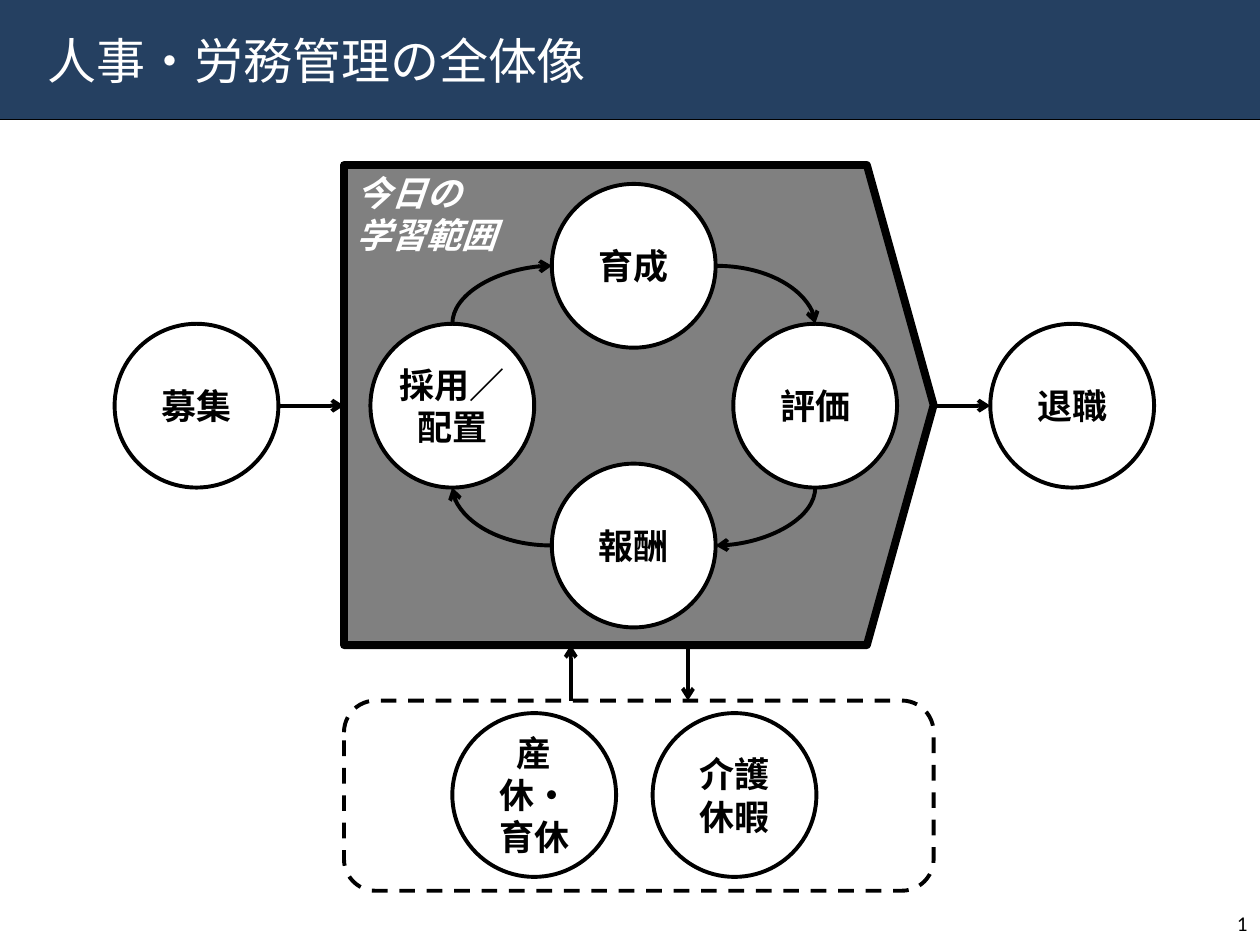
import pptx
import pptx.util
import pptx.dml.color
import pptx.enum.dml
import pptx.enum.shapes
import pptx.enum.text
import pptx.oxml
import pptx.oxml.ns

Inches, Pt = pptx.util.Inches, pptx.util.Pt
SHAPE = pptx.enum.shapes.MSO_SHAPE
CONNECTOR = pptx.enum.shapes.MSO_CONNECTOR
ALIGN = pptx.enum.text.PP_ALIGN
ANCHOR = pptx.enum.text.MSO_ANCHOR
DASH = pptx.enum.dml.MSO_LINE.DASH

WIDTH, HEIGHT = 10, 7.5
NAVY, BLACK, WHITE, GRAY = "254061", "000000", "FFFFFF", "808080"
DIAMETER = 1.3
RADIUS = DIAMETER / 2
MIDDLE_X, MIDDLE_Y = 5.03, 3.22      # centre of the cycle
STEP_X, STEP_Y = 1.44, 1.11          # centre of the cycle to its circles
LEAVE_Y = 6.31
HEADER_HEIGHT = 0.95

SCOPE = (2.73, 1.31, 4.68, 3.81)
LEAVE = (2.73, 5.56, 4.68, 1.51)
SCOPE_RIGHT = SCOPE[0] + SCOPE[2]
SCOPE_BOTTOM = SCOPE[1] + SCOPE[3]

# label: centre of its circle
CIRCLES = {
    "募集": (1.56, MIDDLE_Y),
    "採用／\n配置": (MIDDLE_X - STEP_X, MIDDLE_Y),
    "評価": (MIDDLE_X + STEP_X, MIDDLE_Y),
    "育成": (MIDDLE_X, MIDDLE_Y - STEP_Y),
    "報酬": (MIDDLE_X, MIDDLE_Y + STEP_Y),
    "退職": (8.51, MIDDLE_Y),
    "産休・育休": (4.24, LEAVE_Y),
    "介護\n休暇": (5.83, LEAVE_Y),
}
UNWRAPPED = "採用／\n配置"
CYCLE = ["採用／\n配置", "育成", "評価", "報酬"]
STRAIGHT_ARROWS = [
    ((CIRCLES["募集"][0] + RADIUS, MIDDLE_Y), (SCOPE[0], MIDDLE_Y)),
    ((SCOPE_RIGHT, MIDDLE_Y), (CIRCLES["退職"][0] - RADIUS, MIDDLE_Y)),
    ((4.53, LEAVE[1]), (4.53, SCOPE_BOTTOM)),
    ((5.46, SCOPE_BOTTOM), (5.46, LEAVE[1])),
]


def rgb(color):
    return pptx.dml.color.RGBColor.from_string(color)


def write(shape, text, align=ALIGN.LEFT, anchor=ANCHOR.MIDDLE, wrap=True,
          color=BLACK, **font_format):
    frame = shape.text_frame
    frame.word_wrap = wrap
    frame.vertical_anchor = anchor
    paragraph = frame.paragraphs[0]
    paragraph.text = text
    paragraph.alignment = align
    for name, value in font_format.items():
        setattr(paragraph.font, name, value)
    paragraph.font.color.rgb = rgb(color)


def add_text(slide, box, text, **text_format):
    shape = slide.shapes.add_textbox(*map(Inches, box))
    write(shape, text, name="Calibri", **text_format)


def add_shape(slide, kind, box, fill, line_width=0):
    shape = slide.shapes.add_shape(kind, *map(Inches, box))
    shape.shadow.inherit = False
    shape.fill.solid()
    shape.fill.fore_color.rgb = rgb(fill)
    if line_width:
        shape.line.color.rgb = rgb(BLACK)
        shape.line.width = Pt(line_width)
    else:
        shape.line.fill.background()
    return shape


def add_line(slide, start, end, kind=CONNECTOR.STRAIGHT, width=2.25, arrow=True):
    line = slide.shapes.add_connector(kind, *map(Inches, (*start, *end)))
    line.line.color.rgb = rgb(BLACK)
    line.line.width = Pt(width)
    if arrow:
        tail = pptx.oxml.parse_xml(
            f'<a:tailEnd {pptx.oxml.ns.nsdecls("a")} type="arrow"/>')
        line.line._get_or_add_ln().append(tail)
    line._element.spPr.append(pptx.oxml.parse_xml(
        f'<a:effectLst {pptx.oxml.ns.nsdecls("a")}/>'))
    return line


def add_quarter_arrow(slide, source, target):
    """Curve from one cycle circle to the next, leaving it sideways or upright."""
    upright = source[1] == MIDDLE_Y
    sign_x = 1 if target[0] > source[0] else -1
    sign_y = 1 if target[1] > source[1] else -1
    if upright:
        start = (source[0], source[1] + sign_y * RADIUS)
        end = (target[0] - sign_x * RADIUS, target[1])
        # The preset leaves sideways, so lay it out a quarter turn back.
        x, y = (start[0] + end[0]) / 2, (start[1] + end[1]) / 2
        half_x, half_y = (end[0] - start[0]) / 2, (end[1] - start[1]) / 2
        start, end = (x - half_y, y + half_x), (x + half_y, y - half_x)
    else:
        start = (source[0] + sign_x * RADIUS, source[1])
        end = (target[0], target[1] - sign_y * RADIUS)
    properties = add_line(slide, start, end, CONNECTOR.CURVE)._element.spPr
    properties.find(pptx.oxml.ns.qn("a:prstGeom")).set("prst", "curvedConnector2")
    if upright:
        properties.find(pptx.oxml.ns.qn("a:xfrm")).set("rot", str(90 * 60000))


def main():
    presentation = pptx.Presentation()
    presentation.slide_width = Inches(WIDTH)
    presentation.slide_height = Inches(HEIGHT)
    slide = presentation.slides.add_slide(presentation.slide_layouts[6])

    add_shape(slide, SHAPE.RECTANGLE, (0, 0, WIDTH, HEADER_HEIGHT), NAVY)
    add_line(slide, (0, HEADER_HEIGHT), (WIDTH, HEADER_HEIGHT), width=0.75, arrow=False)
    add_text(slide, (0.28, 0.17, 9.45, 0.61), "人事・労務管理の全体像",
             size=Pt(28), color=WHITE)
    add_text(slide, (7.67, 7.13, 2.33, 0.4), "1", size=Pt(12), align=ALIGN.RIGHT)

    leave = add_shape(slide, SHAPE.ROUNDED_RECTANGLE, LEAVE, WHITE, 2.25)
    leave.line.dash_style = DASH
    scope = add_shape(slide, SHAPE.PENTAGON, SCOPE, GRAY, 4.5)
    scope.adjustments[0] = 0.139
    label_font = {"name": "Arial", "size": Pt(20), "bold": True}
    write(scope, "今日の\n学習範囲", anchor=ANCHOR.TOP, color=WHITE,
          italic=True, **label_font)

    for label, (x, y) in CIRCLES.items():
        box = (x - RADIUS, y - RADIUS, DIAMETER, DIAMETER)
        circle = add_shape(slide, SHAPE.OVAL, box, WHITE, 2.25)
        write(circle, label, align=ALIGN.CENTER, wrap=label != UNWRAPPED, **label_font)

    for source, target in zip(CYCLE, CYCLE[1:] + CYCLE[:1]):
        add_quarter_arrow(slide, CIRCLES[source], CIRCLES[target])
    for start, end in STRAIGHT_ARROWS:
        add_line(slide, start, end)

    presentation.save("out.pptx")


if __name__ == "__main__":
    main()
